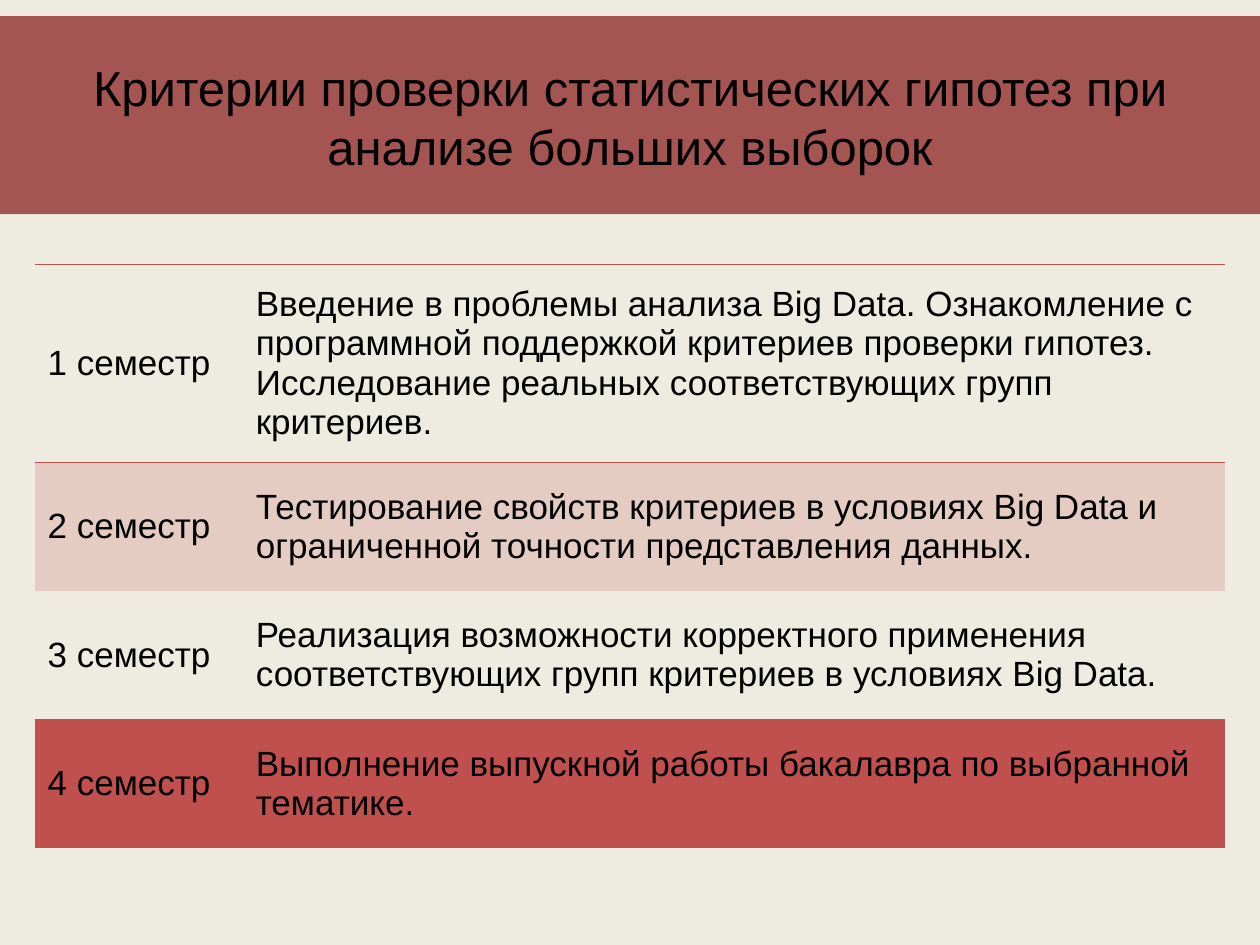
from lxml import etree
from pptx import Presentation
from pptx.dml.color import RGBColor
from pptx.enum import shapes, text
from pptx.oxml import ns
from pptx.util import Pt

FONT = "Arial"
RED = "C0504D"
PLAIN = "{2D5ABB26-0587-4C30-8999-92F81FD0307C}"
TITLE = "Критерии проверки статистических гипотез при анализе больших выборок"
TERMS = [
    "Введение в проблемы анализа Big Data. Ознакомление с программной "
    "поддержкой критериев проверки гипотез. Исследование реальных "
    "соответствующих групп критериев.",
    "Тестирование свойств критериев в условиях Big Data и ограниченной "
    "точности представления данных.",
    "Реализация возможности корректного применения соответствующих групп "
    "критериев в условиях Big Data.",
    "Выполнение выпускной работы бакалавра по выбранной тематике.",
]


def paint(fill, color, alpha=100):
    fill.solid()
    fill.fore_color.rgb = RGBColor.from_string(color)
    if alpha < 100:
        tone = fill._xPr.find(".//" + ns.qn("a:srgbClr"))
        etree.SubElement(tone, ns.qn("a:alpha")).set("val", str(alpha * 1000))


def write(frame, words, size):
    frame.text = words
    font = frame.paragraphs[0].runs[0].font
    font.name, font.size = FONT, Pt(size)
    font.color.rgb = RGBColor.from_string("000000")


def edge(cell, side, color):
    props = cell._tc.get_or_add_tcPr()
    line = etree.SubElement(props, ns.qn("a:ln" + side), w=str(Pt(1)))
    fill = etree.SubElement(line, ns.qn("a:solidFill"))
    etree.SubElement(fill, ns.qn("a:srgbClr"), val=color)


def add_band(slide):
    band = slide.shapes.add_shape(
        shapes.MSO_SHAPE.RECTANGLE, 0, Pt(9.2), Pt(720), Pt(113.2))
    band.shadow.inherit = False
    paint(band.fill, "953735", 83)
    band.line.fill.background()


def add_title(slide):
    frame = slide.shapes.add_textbox(
        Pt(36), Pt(21.6), Pt(648), Pt(90)).text_frame
    frame.word_wrap = True
    frame.vertical_anchor = text.MSO_ANCHOR.MIDDLE
    write(frame, TITLE, 28)
    frame.paragraphs[0].alignment = text.PP_ALIGN.CENTER
    frame.paragraphs[0].line_spacing = Pt(33.7)


def add_terms(slide):
    last = len(TERMS) - 1
    table = slide.shapes.add_table(
        len(TERMS), 2, Pt(20), Pt(151), Pt(680), Pt(333.4)).table
    table._tbl.tblPr.find(ns.qn("a:tableStyleId")).text = PLAIN
    table.first_row = table.horz_banding = False
    for col, width in zip(table.columns, (119, 561)):
        col.width = Pt(width)
    for i, topic in enumerate(TERMS):
        table.rows[i].height = Pt(73.4 if i else 113.2)
        for cell, words in zip(table.rows[i].cells, (f"{i + 1} семестр", topic)):
            write(cell.text_frame, words, 20)
            cell.vertical_anchor = text.MSO_ANCHOR.MIDDLE
            if i == 0:
                edge(cell, "T", RED)
            if i in (0, last):
                edge(cell, "B", RED)
            if i % 2:
                paint(cell.fill, RED, 20)
            else:
                cell.fill.background()


def main():
    deck = Presentation()
    deck.slide_width, deck.slide_height = Pt(720), Pt(540)
    slide = deck.slides.add_slide(deck.slide_layouts[6])
    paint(slide.background.fill, "EEECE1")
    add_band(slide)
    add_title(slide)
    add_terms(slide)
    deck.save("out.pptx")


if __name__ == "__main__":
    main()
